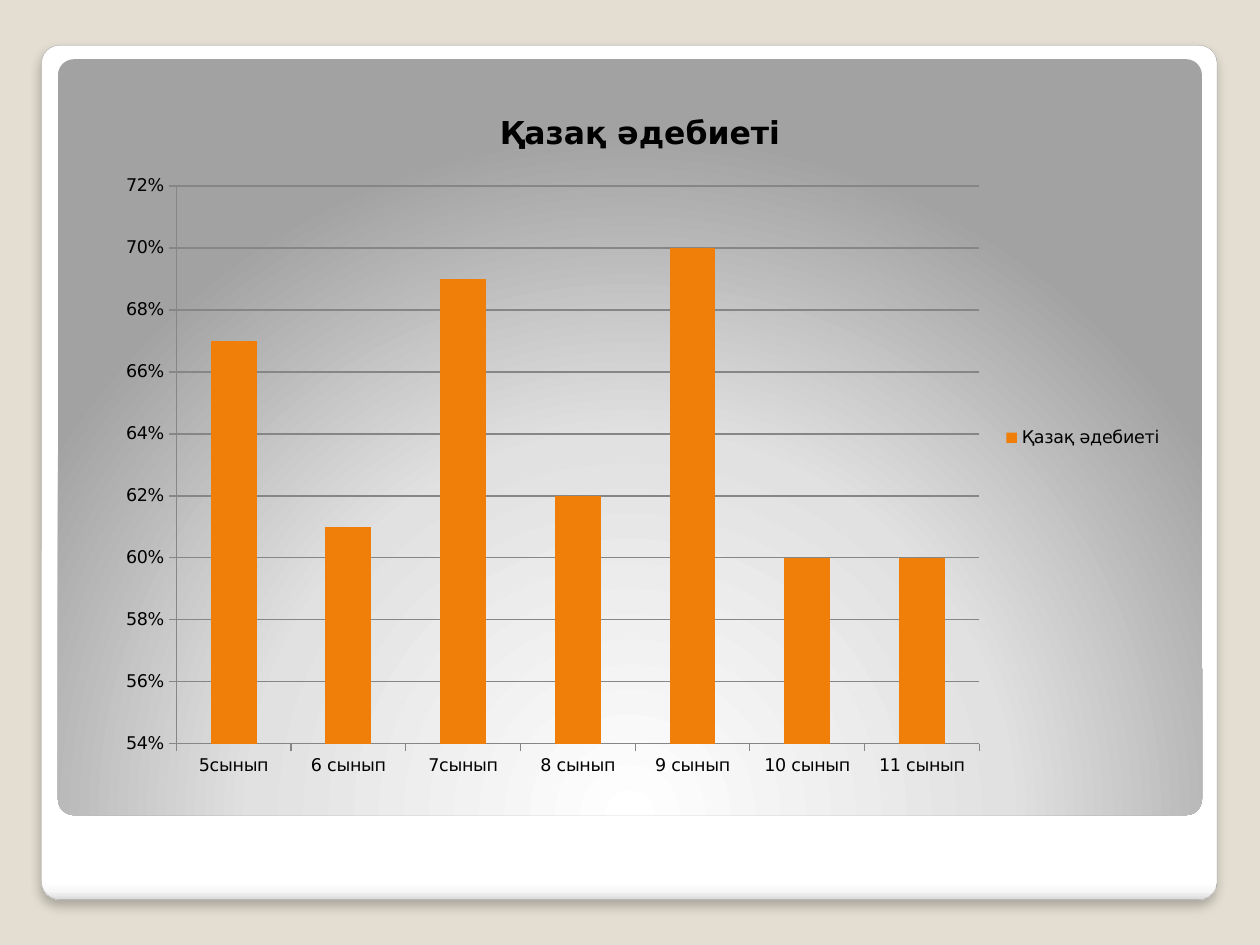
from dataclasses import dataclass

from pptx import Presentation
from pptx.chart.data import CategoryChartData
from pptx.dml.color import RGBColor
from pptx.enum.chart import XL_CHART_TYPE, XL_LEGEND_POSITION, XL_TICK_MARK
from pptx.enum.shapes import MSO_SHAPE
from pptx.oxml import parse_xml
from pptx.oxml.ns import nsdecls, qn
from pptx.util import Inches, Pt

ROUNDED = MSO_SHAPE.ROUNDED_RECTANGLE
COLUMN = XL_CHART_TYPE.COLUMN_CLUSTERED
LEGEND_RIGHT = XL_LEGEND_POSITION.RIGHT
TICK_OUT = XL_TICK_MARK.OUTSIDE

FONT = "DejaVu Sans"
SUBJECT = "Қазақ әдебиеті"
SCORES = {
    "5сынып": 0.67,
    "6 сынып": 0.61,
    "7сынып": 0.69,
    "8 сынып": 0.62,
    "9 сынып": 0.7,
    "10 сынып": 0.6,
    "11 сынып": 0.6,
}
LINEAR = '<a:lin ang="5400000" scaled="0"/>'
RADIAL = ('<a:path path="circle"><a:fillToRect l="50000" t="175000" '
          'r="50000" b="-75000"/></a:path>')
SHADOW = ('<a:outerShdw blurRad="76200" dist="50800" dir="5400000" algn="t" '
          'rotWithShape="0"><a:srgbClr val="000000"><a:alpha val="25000"/>'
          '</a:srgbClr></a:outerShdw>')


@dataclass
class Panel:
    left: float
    top: float
    width: float
    height: float
    stops: list[tuple[int, str]]
    direction: str
    line: str = ""
    shadow: str = ""


PANELS = [
    Panel(0.33, 0.36, 9.33, 6.78,
          [(0, "FFFFFF"), (98, "FFFFFF"), (99, "F7F7F7"), (100, "DADADA")],
          LINEAR, "A4A4A4", SHADOW),
    Panel(0.46, 0.47, 9.08, 6,
          [(0, "FFFFFF"), (55, "E1E1E1"), (100, "A2A2A2")], RADIAL),
]


def color(value: str) -> RGBColor:
    return RGBColor.from_string(value)


def set_font(font, size: float, bold: bool = False) -> None:
    font.name = FONT
    font.size = Pt(size)
    font.bold = bold
    font.color.rgb = color("000000")


def set_line(line, value: str, width: float) -> None:
    line.color.rgb = color(value)
    line.width = Pt(width)


def add_panel(s, panel: Panel) -> None:
    sp = s.shapes.add_shape(ROUNDED, Inches(panel.left), Inches(panel.top),
                            Inches(panel.width), Inches(panel.height))
    sp.adjustments[0] = 0.021
    if panel.line:
        set_line(sp.line, panel.line, 0.16)
    else:
        sp.line.fill.background()
    sp.shadow.inherit = False
    props = sp.element.spPr
    if panel.shadow:
        effects = props.find(qn("a:effectLst"))
        props.replace(effects, parse_xml(
            f'<a:effectLst {nsdecls("a")}>{panel.shadow}</a:effectLst>'))
    stops = "".join(f'<a:gs pos="{pos * 1000}"><a:srgbClr val="{value}"/></a:gs>'
                    for pos, value in panel.stops)
    props.find(qn("a:prstGeom")).addnext(parse_xml(
        f'<a:gradFill {nsdecls("a")} rotWithShape="1"><a:gsLst>{stops}</a:gsLst>'
        f'{panel.direction}</a:gradFill>'))


def add_score_chart(s) -> None:
    data = CategoryChartData(number_format="0%")
    data.categories = list(SCORES)
    data.add_series(SUBJECT, list(SCORES.values()))
    chart = s.shapes.add_chart(COLUMN, Inches(0.83), Inches(0.68),
                               Inches(8.5), Inches(5.59), data).chart
    set_font(chart.font, 10)

    # Title and legend
    chart.has_title = True
    tf = chart.chart_title.text_frame
    tf.text = SUBJECT
    set_font(tf.paragraphs[0].runs[0].font, 18, bold=True)
    chart.chart_title.include_in_layout = False
    chart.has_legend = True
    chart.legend.position = LEGEND_RIGHT
    chart.legend.include_in_layout = False

    # Columns
    plot = chart.plots[0]
    plot.vary_by_categories = False
    plot.gap_width = 150
    fill = plot.series[0].format.fill
    fill.solid()
    fill.fore_color.rgb = color("F07F09")

    # Axes
    for axis in (chart.category_axis, chart.value_axis):
        axis.major_tick_mark = TICK_OUT
        set_line(axis.format.line, "868686", 0.75)
    axis = chart.value_axis
    axis.minimum_scale, axis.maximum_scale, axis.major_unit = 0.54, 0.72, 0.02
    axis.has_major_gridlines = True
    set_line(axis.major_gridlines.format.line, "868686", 0.75)
    axis.tick_labels.number_format = "0%"
    axis.tick_labels.number_format_is_linked = False


def main() -> None:
    prs = Presentation()
    prs.slide_width, prs.slide_height = Inches(10), Inches(7.5)
    s = prs.slides.add_slide(prs.slide_layouts[6])
    s.background.fill.solid()
    s.background.fill.fore_color.rgb = color("E3DED1")
    for panel in PANELS:
        add_panel(s, panel)
    add_score_chart(s)
    prs.save("out.pptx")


if __name__ == "__main__":
    main()
